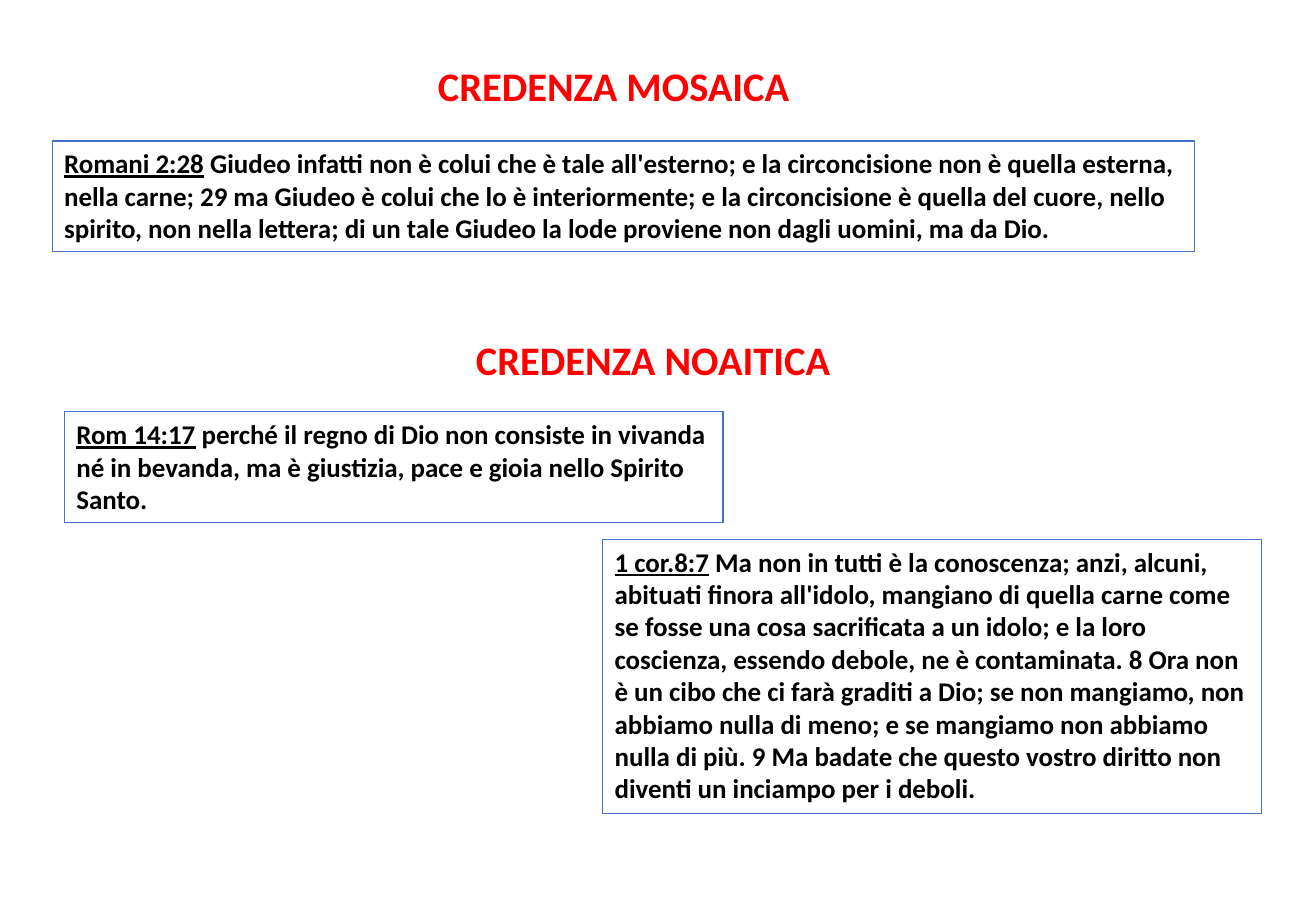
import pptx
import pptx.util
import pptx.dml.color
import pptx.enum.shapes
import pptx.enum.text

Inches, Pt = pptx.util.Inches, pptx.util.Pt
RGB = pptx.dml.color.RGBColor
THEME = {
    "font": "Calibri",
    "heading": RGB(0xFF, 0x00, 0x00),
    "text": RGB(0x00, 0x00, 0x00),
    "border": RGB(0x44, 0x72, 0xC4),
    "heading_size": Pt(24),
    "verse_size": Pt(16),
}


def add_run(p, text, size, color, underline=False):
    r = p.add_run()
    r.text = text
    r.font.name = THEME["font"]
    r.font.size = size
    r.font.bold = True
    r.font.underline = underline
    r.font.color.rgb = color


prs = pptx.Presentation()
prs.slide_width, prs.slide_height = Inches(10.83), Inches(7.5)
s = prs.slides.add_slide(prs.slide_layouts.get_by_name("Section Header"))

# Headings: placeholder, text, left, top, right inset, bottom inset
headings = [
    (s.shapes.title, "CREDENZA MOSAICA", 2.71, 0.2, 0.27, 0.05),
    (s.placeholders[1], "CREDENZA NOAITICA", 2.95, 2.58, 0.1, 0.29),
]
for sp, text, left, top, inset_right, inset_bottom in headings:
    sp.left, sp.top = Inches(left), Inches(top)
    sp.width, sp.height = Inches(4.85), Inches(1.05)
    tf = sp.text_frame
    tf.word_wrap = True
    tf.auto_size = pptx.enum.text.MSO_AUTO_SIZE.NONE
    tf.vertical_anchor = pptx.enum.text.MSO_ANCHOR.MIDDLE
    tf.margin_right, tf.margin_bottom = Inches(inset_right), Inches(inset_bottom)
    p = tf.paragraphs[0]
    p.alignment = pptx.enum.text.PP_ALIGN.CENTER
    p.line_spacing = 0.9
    p.space_before = Pt(0)
    add_run(p, text, THEME["heading_size"], THEME["heading"])

# Verses: left, top, width, height, reference, text
verses = [
    (0.43, 1.16, 9.4, 0.91, "Romani 2:28",
     " Giudeo infatti non è colui che è tale all'esterno; e la circoncisione "
     "non è quella esterna, nella carne; 29 ma Giudeo è colui che lo è "
     "interiormente; e la circoncisione è quella del cuore, nello spirito, non "
     "nella lettera; di un tale Giudeo la lode proviene non dagli uomini, ma da Dio."),
    (0.53, 3.39, 5.42, 0.91, "Rom 14:17",
     " perché il regno di Dio non consiste in vivanda né in bevanda, ma è "
     "giustizia, pace e gioia nello Spirito Santo."),
    (4.96, 4.44, 5.42, 2.26, "1 cor.8:7",
     " Ma non in tutti è la conoscenza; anzi, alcuni, abituati finora "
     "all'idolo, mangiano di quella carne come se fosse una cosa sacrificata a un "
     "idolo; e la loro coscienza, essendo debole, ne è contaminata. 8 Ora non è "
     "un cibo che ci farà graditi a Dio; se non mangiamo, non abbiamo nulla di "
     "meno; e se mangiamo non abbiamo nulla di più. 9 Ma badate che questo "
     "vostro diritto non diventi un inciampo per i deboli."),
]
for left, top, width, height, reference, text in verses:
    sp = s.shapes.add_shape(
        pptx.enum.shapes.MSO_SHAPE.RECTANGLE,
        Inches(left), Inches(top), Inches(width), Inches(height))
    sp.shadow.inherit = False
    sp.fill.background()
    sp.line.color.rgb = THEME["border"]
    sp.line.width = Pt(0.75)
    tf = sp.text_frame
    tf.word_wrap = True
    tf.auto_size = pptx.enum.text.MSO_AUTO_SIZE.SHAPE_TO_FIT_TEXT
    tf.vertical_anchor = pptx.enum.text.MSO_ANCHOR.TOP
    p = tf.paragraphs[0]
    p.alignment = pptx.enum.text.PP_ALIGN.LEFT
    add_run(p, reference, THEME["verse_size"], THEME["text"], underline=True)
    add_run(p, text, THEME["verse_size"], THEME["text"])

prs.save("out.pptx")
